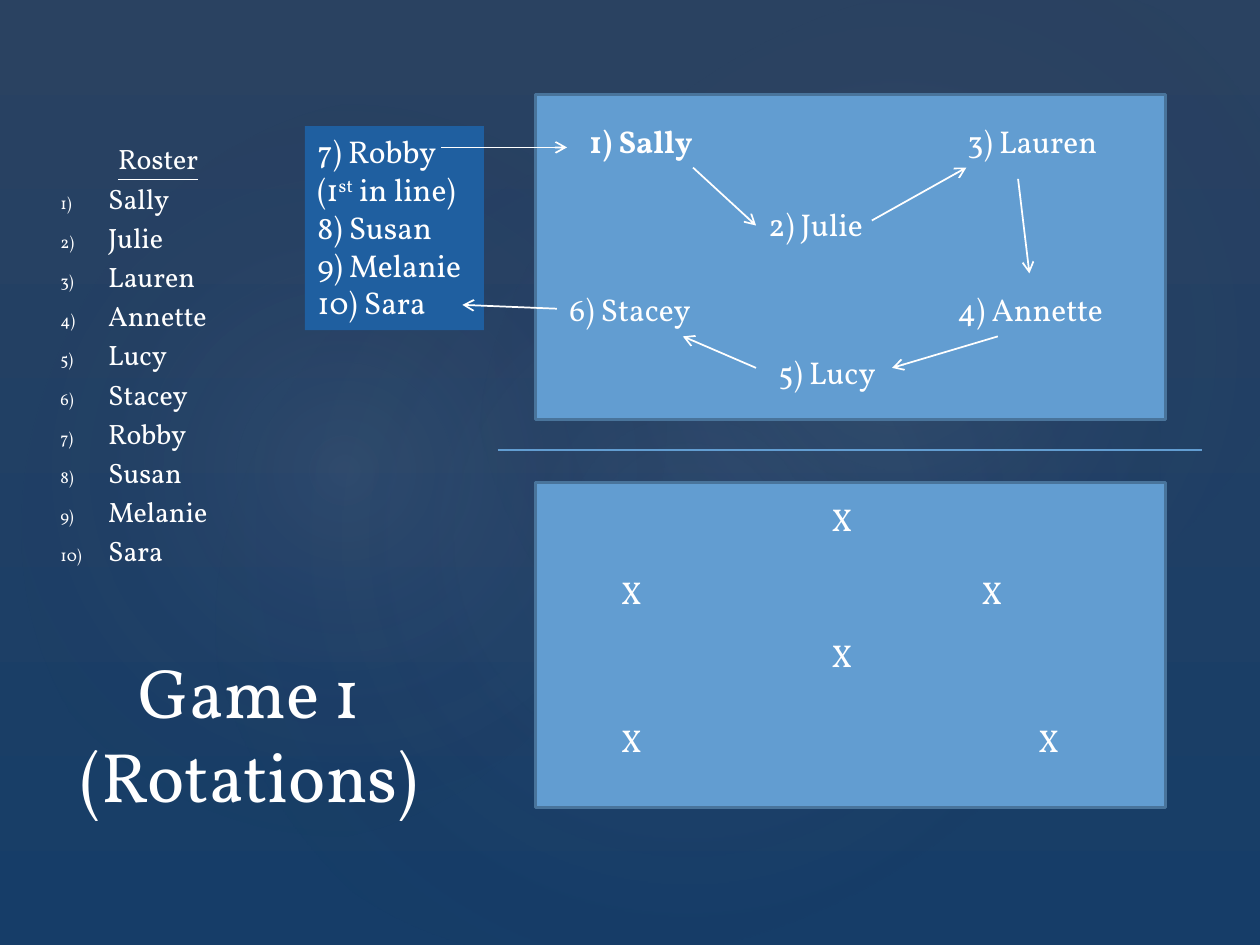
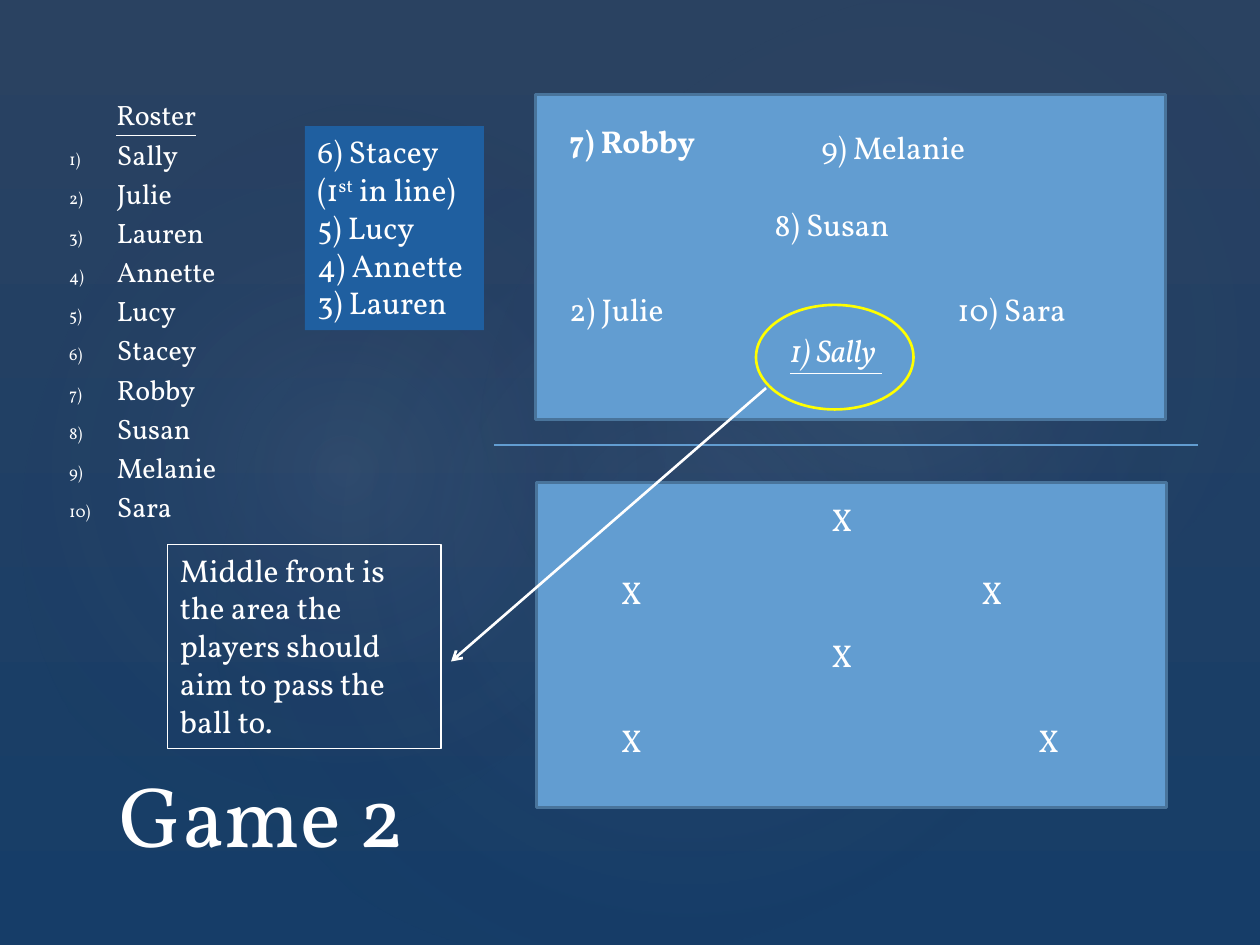
import pptx
import pptx.util
import pptx.dml.color
import pptx.enum.shapes
import pptx.enum.text
import pptx.oxml
import pptx.oxml.ns
from lxml import etree

RGB = pptx.dml.color.RGBColor
Inches = pptx.util.Inches
Pt = pptx.util.Pt
KIND = pptx.enum.shapes.MSO_SHAPE
ALIGN = pptx.enum.text.PP_ALIGN
ANCHOR = pptx.enum.text.MSO_ANCHOR

WHITE = RGB(0xFF, 0xFF, 0xFF)
SKY = RGB(0x62, 0x9D, 0xD1)
EDGE = RGB(0x49, 0x74, 0x9B)
BLUE = RGB(0x1F, 0x5F, 0xA0)
YELLOW = RGB(0xFF, 0xFF, 0x00)
DUSK = RGB(0x2A, 0x42, 0x61)
NAVY = RGB(0x16, 0x3D, 0x68)
GLOW = RGB(0xC4, 0xBC, 0xC6)
DEEP = RGB(0x24, 0x28, 0x52)
FONT = "Vollkorn"

ROSTER = ["Sally", "Julie", "Lauren", "Annette", "Lucy",
          "Stacey", "Robby", "Susan", "Melanie", "Sara"]
RIVALS = [(6.5, 3.92), (4.83, 4.5), (7.69, 4.5),
          (6.5, 5), (4.83, 5.67), (8.14, 5.67)]
GLOWS = [
    ((1.5, 1.14, 7.92, 6.24), 328.7, 7),
    ((-0.3, 1.28, 6.06, 4.9), 294.3, 8),
    ((3.58, 0.13, 7.09, 5.2), 328.7, 8),
]
COURT = (5, 2.58)
BENCH = (2.42, 1, 1.42, 1.62)
LABEL = (1.42, 0.4)

GAMES = [
    {
        "title": "Game 1\v(Rotations)", "place": (0.29, 4.9, 3.38, 1.63),
        "size": 40, "align": ALIGN.CENTER,
        "roster": (0.38, 0.94, 1.75, 3.75),
        "line": (3.95, 3.57, 9.54, 3.57), "lower": 4.25,
        "bench": [7, 8, 9, 10],
        "server": 1,
        "spots": {1: (4.58, 0.92), 3: (7.58, 0.92), 2: (6, 1.58),
                  5: (6.08, 2.75), 4: (7.5, 2.25), 6: (4.42, 2.25)},
        "arrows": [(5.5, 1.33, 6, 1.79), (6.92, 1.75, 7.67, 1.33),
                   (8.08, 1.42, 8.17, 2.17), (7.92, 2.67, 7.08, 2.92),
                   (6, 2.92, 5.42, 2.67), (4.42, 2.45, 3.67, 2.42),
                   (3.5, 1.17, 4.5, 1.17)],
    },
    {
        "title": "Game 2", "place": (0.85, 5.91, 8.25, 1),
        "size": 49, "align": ALIGN.LEFT,
        "roster": (0.45, 0.59, 1.58, 3.75),
        "line": (3.92, 3.53, 9.51, 3.53), "lower": 4.26,
        "bench": [6, 5, 4, 3],
        "server": 7,
        "spots": {7: (4.42, 0.92), 9: (6.42, 0.97), 8: (6.05, 1.58),
                  10: (7.5, 2.25), 2: (4.42, 2.25)},
        "arrows": [],
    },
]
TARGET = {
    "ring": (6, 2.42, 1.25, 0.83),
    "name": (6.17, 2.58),
    "note": (1.33, 4.32, 2.17, 1.62),
    "text": "Middle front is the area the players should aim to pass the ball to.",
    "arrow": (6.08, 3.08, 3.58, 5.25),
}


def tag(num):
    return f"{num}) {ROSTER[num - 1]}"


def shape(slide, kind, place, fill=None, line=None, width=1.5):
    item = slide.shapes.add_shape(kind, *map(Inches, place))
    item.shadow.inherit = False
    if fill is None:
        item.fill.background()
    else:
        item.fill.solid()
        item.fill.fore_color.rgb = fill
    if line is None:
        item.line.fill.background()
    else:
        item.line.color.rgb = line
        item.line.width = Pt(width)
    return item


def style(item, size=18, align=ALIGN.LEFT, anchor=ANCHOR.TOP):
    frame = item.text_frame
    frame.word_wrap = True
    frame.vertical_anchor = anchor
    for para in frame.paragraphs:
        para.alignment = align
        for run in para.runs:
            run.font.name = FONT
            run.font.size = Pt(size)
            run.font.color.rgb = WHITE


def text(slide, words, place, **looks):
    box = slide.shapes.add_textbox(*map(Inches, place))
    box.text_frame.text = words
    style(box, **looks)
    return box


def label(slide, words, spot):
    box = text(slide, words, spot + LABEL)
    return box.text_frame.paragraphs[0].runs[0].font


def line(slide, ends, color=WHITE, width=1, head=True):
    item = slide.shapes.add_connector(
        pptx.enum.shapes.MSO_CONNECTOR.STRAIGHT, *map(Inches, ends))
    item.line.color.rgb = color
    item.line.width = Pt(width)
    if head:
        tail = etree.SubElement(item.line._get_or_add_ln(),
                                pptx.oxml.ns.qn("a:tailEnd"))
        tail.set("type", "arrow")
    etree.SubElement(item._element.spPr, pptx.oxml.ns.qn("a:effectLst"))


def glow(slide, place, turn, alpha):
    item = shape(slide, KIND.OVAL, place)
    item.rotation = turn
    stops = "".join(
        f'<a:gs pos="{pos}000"><a:srgbClr val="{color}">'
        f'<a:alpha val="{part}000"/></a:srgbClr></a:gs>'
        for pos, color, part in [(0, GLOW, alpha), (58, DEEP, 0), (100, DEEP, 0)])
    fill = pptx.oxml.parse_xml(
        f'<a:gradFill {pptx.oxml.ns.nsdecls("a")}><a:gsLst>{stops}</a:gsLst>'
        '<a:path path="circle"><a:fillToRect l="50000" t="50000" r="50000" '
        'b="50000"/></a:path></a:gradFill>')
    props = item._element.spPr
    props.replace(props.find(pptx.oxml.ns.qn("a:noFill")), fill)


def back(deck):
    fill = deck.slide_master.background.fill
    fill.gradient()
    fill.gradient_angle = 270
    for stop, color, pos in zip(fill.gradient_stops, (DUSK, NAVY), (0, 1)):
        stop.color.rgb = color
        stop.position = pos


def roster(slide, place):
    box = text(slide, "\n".join(["Roster"] + ROSTER), place,
               size=16, anchor=ANCHOR.MIDDLE)
    head, *names = box.text_frame.paragraphs
    head.alignment = ALIGN.CENTER
    head.runs[0].font.underline = True
    head.space_before = Pt(3.2)
    for para in names:
        para.space_before = Pt(3.2)
        props = para._p.get_or_add_pPr()
        props.set("marL", str(Inches(0.38)))
        props.set("indent", str(-Inches(0.38)))
        size = etree.SubElement(props, pptx.oxml.ns.qn("a:buSzPct"))
        size.set("val", "60000")
        mark = etree.SubElement(props, pptx.oxml.ns.qn("a:buAutoNum"))
        mark.set("type", "arabicParenR")


def bench(slide, nums):
    box = shape(slide, KIND.RECTANGLE, BENCH, BLUE)
    box.text_frame.text = "\n".join(map(tag, nums))
    first = box.text_frame.paragraphs[0]
    first.runs[0].text += " (1"
    for part in ("st", " in line)"):
        first.add_run().text = part
    first.runs[1]._r.get_or_add_rPr().set("baseline", "30000")
    style(box)


def target(slide):
    shape(slide, KIND.OVAL, TARGET["ring"], SKY, YELLOW)
    font = label(slide, tag(1) + " ", TARGET["name"])
    font.italic = font.underline = True
    note = shape(slide, KIND.RECTANGLE, TARGET["note"], line=WHITE, width=0.75)
    note.text_frame.text = TARGET["text"]
    style(note)
    line(slide, TARGET["arrow"], width=1.5)


def build(deck, game):
    slide = deck.slides.add_slide(deck.slide_layouts[6])
    for spec in GLOWS:
        glow(slide, *spec)
    roster(slide, game["roster"])
    text(slide, game["title"], game["place"], size=game["size"],
         align=game["align"], anchor=ANCHOR.BOTTOM)
    for corner in ((4.25, 0.75), (game["lower"], 3.83)):
        shape(slide, KIND.RECTANGLE, corner + COURT, SKY, EDGE)
    line(slide, game["line"], SKY, head=False)
    bench(slide, game["bench"])
    for num, spot in game["spots"].items():
        label(slide, tag(num), spot).bold = num == game["server"]
    for spot in RIVALS:
        label(slide, "X", spot)
    for ends in game["arrows"]:
        line(slide, ends)
    return slide


def main():
    deck = pptx.Presentation()
    deck.slide_width, deck.slide_height = Inches(10), Inches(7.5)
    back(deck)
    slides = [build(deck, game) for game in GAMES]
    target(slides[1])
    deck.save("out.pptx")


if __name__ == "__main__":
    main()
